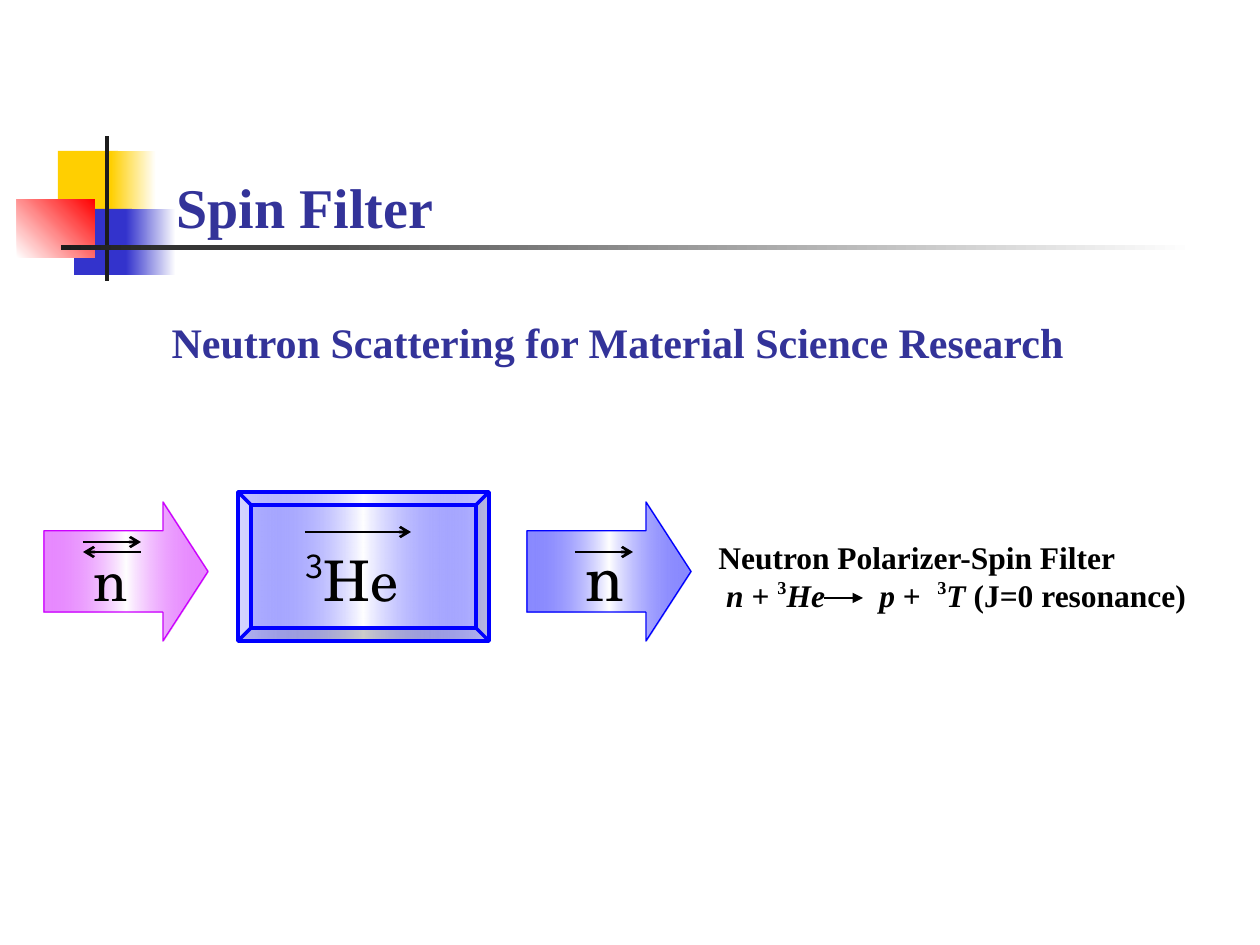
import pptx
import pptx.util
import pptx.dml.color
import pptx.enum.shapes
import pptx.enum.text
import pptx.oxml
import pptx.oxml.ns

SHAPES = pptx.enum.shapes.MSO_SHAPE
ANCHOR = pptx.enum.text.MSO_ANCHOR

THEME = {
    "yellow": "FFCF01", "navy": "3333CC", "red": "FF0000", "ink": "1C1C1C",
    "white": "FFFFFF", "blue": "0000FF", "magenta": "CC00FF",
    "heading": "333399", "text": "000000",
    "serif": "Times New Roman", "symbol": "TeX Gyre Schola", "mass": "Noto Sans CJK KR",
    "title": 32, "subtitle": 24, "note": 18, "big": 36, "small": 32,
}

ORNAMENT = [
    ((58, 151, 60, 66), ["yellow"], 0),
    ((111, 151, 45, 66), ["yellow", "white"], 0),
    ((74, 209, 58, 66), ["navy"], 0),
    ((126, 209, 50, 66), ["navy", "white"], 0),
    ((17, 199, 78, 59), ["white", "red"], 315),
    ((105, 136, 4, 145), ["ink"], 0),
    ((61, 245, 1134, 5), ["ink", "white"], 0),
]

APPARATUS = [
    (SHAPES.BEVEL, (238, 492, 251, 149), [0.087], "blue", 27, 2),
    (SHAPES.RIGHT_ARROW, (44, 502, 164, 139), [0.585, 0.324], "magenta", 45, 0.75),
    (SHAPES.RIGHT_ARROW, (527, 502, 164, 139), [0.585, 0.324], "blue", 45, 0.75),
]

SPINS = [
    ((305, 532), (411, 532), 1.5, "arrow"),
    ((83, 542), (141, 542), 1.5, "arrow"),
    ((141, 552), (83, 552), 1.5, "arrow"),
    ((575, 552), (633, 552), 1.5, "arrow"),
    ((824, 598), (863, 598), 1, "triangle"),
]

HEADING = {"name": "serif", "color": "heading", "bold": True}
SYMBOL = {"name": "symbol", "size": "big", "color": "text"}
NOTE = {"name": "serif", "size": "note", "color": "text", "bold": True}
ITALIC = {"italic": True}
SUPER = {"raised": 40}

SUBTITLE = ((159, 305, 1017, 68), HEADING | {"size": "subtitle"},
            [[("Neutron Scattering for Material Science Research", {})]])
LABELS = [
    ((164, 178, 1017, 68), HEADING | {"size": "title"}, [[("Spin Filter", {})]]),
    ((276, 532, 174, 88), SYMBOL,
     [[(" ", {}), ("3", SUPER | {"size": "small", "name": "mass"}), ("He", {"size": "small"})]]),
    ((64, 532, 97, 88), SYMBOL, [[(" ", {}), ("n", {"size": "small"})]]),
    ((556, 532, 97, 88), SYMBOL, [[(" n", {})]]),
    ((706, 532, 541, 88), NOTE, [
        [("Neutron Polarizer-Spin Filter", {})],
        [(" n", ITALIC), (" + ", {}), ("3", SUPER), ("He\tp", ITALIC), (" +\t", {}),
         ("3", SUPER), ("T", ITALIC), (" (J=0 resonance)", {})],
    ]),
]
NOTE_TABS = [161, 219]


def px(length):
    return pptx.util.Emu(round(length * 914400 / 126))


def rgb(color):
    return pptx.dml.color.RGBColor.from_string(THEME[color])


def paint(fill, stops, angle=0):
    if len(stops) == 1:
        fill.solid()
        fill.fore_color.rgb = rgb(stops[0][0])
        return
    fill.gradient()
    fill.gradient_angle = (360 - angle) % 360
    stop_list = fill._fill._gradFill.gsLst
    for old in list(stop_list):
        stop_list.remove(old)
    for i, (color, opacity) in enumerate(stops):
        position = round(100000 * i / (len(stops) - 1))
        stop_list.append(pptx.oxml.parse_xml(
            f'<a:gs {pptx.oxml.ns.nsdecls("a")} pos="{position}">'
            f'<a:srgbClr val="{THEME[color]}"><a:alpha val="{opacity * 1000}"/></a:srgbClr></a:gs>'))


def draw(slide, kind, area, stops, angle=0):
    shape = slide.shapes.add_shape(kind, *map(px, area))
    shape.shadow.inherit = False
    paint(shape.fill, stops, angle)
    shape.line.fill.background()
    return shape


def write(box, area, base, paragraphs, anchor):
    for side, length in zip(("left", "top", "width", "height"), area):
        setattr(box, side, px(length))
    frame = box.text_frame
    settings = {"word_wrap": True, "vertical_anchor": anchor,
                "auto_size": pptx.enum.text.MSO_AUTO_SIZE.NONE}
    for key, value in settings.items():
        setattr(frame, key, value)
    for i, runs in enumerate(paragraphs):
        paragraph = frame.add_paragraph() if i else frame.paragraphs[0]
        paragraph.alignment = pptx.enum.text.PP_ALIGN.LEFT
        if any("\t" in words for words, _ in runs):
            tabs = "".join(f'<a:tab pos="{px(stop)}" algn="l"/>' for stop in NOTE_TABS)
            paragraph._p.get_or_add_pPr().append(pptx.oxml.parse_xml(
                f'<a:tabLst {pptx.oxml.ns.nsdecls("a")}>{tabs}</a:tabLst>'))
        for words, extra in runs:
            run = paragraph.add_run()
            run.text = words
            look = base | extra
            font = {"name": THEME[look["name"]], "size": pptx.util.Pt(THEME[look["size"]]),
                    "bold": look.get("bold", False), "italic": look.get("italic", False)}
            for key, value in font.items():
                setattr(run.font, key, value)
            run.font.color.rgb = rgb(look["color"])
            if "raised" in look:
                run._r.get_or_add_rPr().set("baseline", str(look["raised"] * 1000))


def connect(slide, start, end, width, head):
    line = slide.shapes.add_connector(
        pptx.enum.shapes.MSO_CONNECTOR.STRAIGHT, *map(px, start + end))
    line.line.color.rgb = rgb("text")
    line.line.width = pptx.util.Pt(width)
    namespace = pptx.oxml.ns.nsdecls("a")
    line.line._get_or_add_ln().append(
        pptx.oxml.parse_xml(f'<a:tailEnd {namespace} type="{head}"/>'))
    line._element.spPr.append(pptx.oxml.parse_xml(f"<a:effectLst {namespace}/>"))


def main():
    deck = pptx.Presentation()
    deck.slide_width, deck.slide_height = px(1260), px(945)
    slide = deck.slides.add_slide(deck.slide_layouts[5])

    for area, colors, angle in ORNAMENT:
        draw(slide, SHAPES.RECTANGLE, area, [(color, 100) for color in colors], angle)
    for kind, area, adjustments, color, opacity, width in APPARATUS:
        part = draw(slide, kind, area, [(color, opacity), ("white", 100), (color, opacity)])
        for i, value in enumerate(adjustments):
            part.adjustments[i] = value
        part.line.color.rgb = rgb(color)
        part.line.width = pptx.util.Pt(width)

    write(slide.shapes.title, *SUBTITLE, ANCHOR.BOTTOM)
    for area, base, paragraphs in LABELS:
        anchor = ANCHOR.BOTTOM if base["color"] == "heading" else ANCHOR.TOP
        write(slide.shapes.add_textbox(*map(px, area)), area, base, paragraphs, anchor)
    for spin in SPINS:
        connect(slide, *spin)
    deck.save("out.pptx")


if __name__ == "__main__":
    main()
